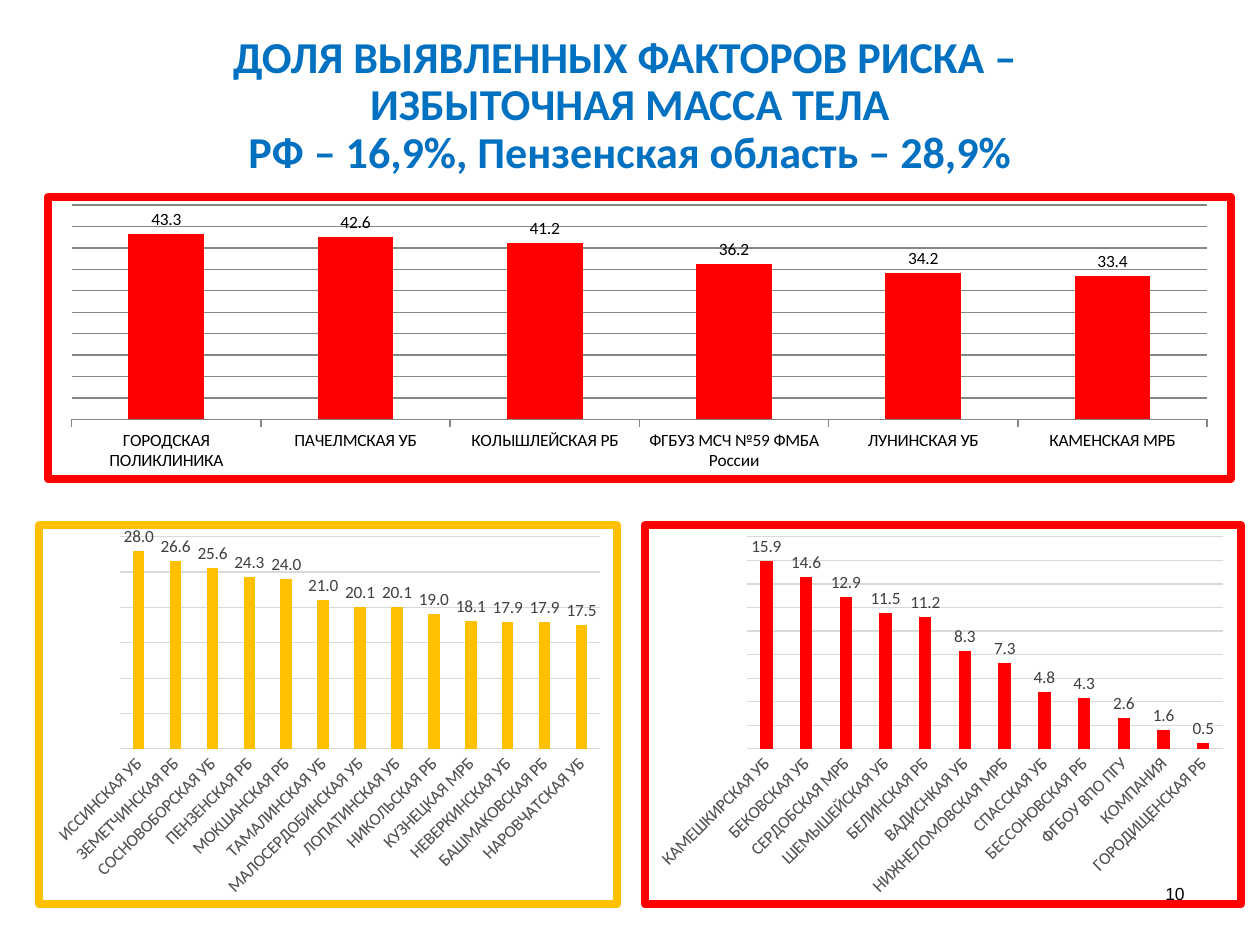
"""Build the slide on overweight as a risk factor, with one wide and two small bar charts."""
from dataclasses import dataclass

from lxml.etree import SubElement as Sub
from pptx import Presentation
from pptx.chart.data import CategoryChartData as Data
from pptx.dml.color import RGBColor as Rgb
from pptx.enum.chart import XL_CHART_TYPE as Kind, XL_LABEL_POSITION as Spot, XL_TICK_MARK as Tick
from pptx.enum.text import MSO_ANCHOR as Anchor, MSO_AUTO_SIZE as Fit, PP_ALIGN as Align
from pptx.oxml import parse_xml
from pptx.oxml.ns import nsdecls, qn
from pptx.util import Pt


@dataclass(frozen=True)
class Theme:
    """Hold the colours, fonts and sizes of the slide."""
    blue: str = "0070C0"
    red: str = "FF0000"
    gold: str = "FFC000"
    black: str = "000000"
    dark: str = "404040"
    mid: str = "595959"
    pale: str = "D9D9D9"
    rule: str = "868686"
    font: str = "Calibri"
    plain: str = "Arial"
    head: float = 25.2
    small: float = 10
    hair: float = 0.75
    frame: float = 4.5


T = Theme()
TITLE = ["ДОЛЯ ВЫЯВЛЕННЫХ ФАКТОРОВ РИСКА – ", "ИЗБЫТОЧНАЯ МАССА ТЕЛА",
         "РФ – 16,9%, Пензенская область – 28,9%"]
PAGE = "10"
MIDDLE = [("ИССИНСКАЯ УБ", 28), ("ЗЕМЕТЧИНСКАЯ РБ", 26.6), ("СОСНОВОБОРСКАЯ УБ", 25.6),
          ("ПЕНЗЕНСКАЯ РБ", 24.3), ("МОКШАНСКАЯ РБ", 24), ("ТАМАЛИНСКАЯ УБ", 21),
          ("МАЛОСЕРДОБИНСКАЯ УБ", 20.1), ("ЛОПАТИНСКАЯ УБ", 20.1), ("НИКОЛЬСКАЯ РБ", 19),
          ("КУЗНЕЦКАЯ МРБ", 18.1), ("НЕВЕРКИНСКАЯ УБ", 17.9), ("БАШМАКОВСКАЯ РБ", 17.9),
          ("НАРОВЧАТСКАЯ УБ", 17.5)]
HIGH = [("ГОРОДСКАЯ ПОЛИКЛИНИКА", 43.3), ("ПАЧЕЛМСКАЯ УБ", 42.6), ("КОЛЫШЛЕЙСКАЯ РБ", 41.2),
        ("ФГБУЗ МСЧ №59 ФМБА России", 36.2), ("ЛУНИНСКАЯ УБ", 34.2), ("КАМЕНСКАЯ МРБ", 33.4)]
LOW = [("КАМЕШКИРСКАЯ УБ", 15.9), ("БЕКОВСКАЯ УБ", 14.6), ("СЕРДОБСКАЯ МРБ", 12.9),
       ("ШЕМЫШЕЙСКАЯ УБ", 11.5), ("БЕЛИНСКАЯ РБ", 11.2), ("ВАДИСНКАЯ УБ", 8.3),
       ("НИЖНЕЛОМОВСКАЯ МРБ", 7.3), ("СПАССКАЯ УБ", 4.8), ("БЕССОНОВСКАЯ РБ", 4.3),
       ("ФГБОУ ВПО ПГУ", 2.6), ("КОМПАНИЯ", 1.6), ("ГОРОДИЩЕНСКАЯ РБ", 0.5)]

WIDE = dict(gap=150, lap=0, text=T.black, tick=T.black, grid=T.rule, mark=Tick.OUTSIDE, turn=0)
SLIM = dict(gap=219, lap=-27, text=T.dark, tick=T.mid, grid=T.pale, mark=Tick.NONE, turn=-45)
CHARTS = [
    dict(rows=MIDDLE, box=(20.2, 298, 334.8, 221), hue=T.gold, top=30, step=5,
         plot=(0.14, 0.03, 0.83, 0.56), look=SLIM),
    dict(rows=HIGH, box=(25.2, 110.2, 680.4, 165.6), hue=T.red, top=50, step=5,
         plot=(0.02, 0.03, 0.96, 0.76), look=WIDE),
    dict(rows=LOW, box=(366.5, 298, 344.9, 221), hue=T.red, top=18, step=2,
         plot=(0.17, 0.03, 0.8, 0.56), look=SLIM),
]


def style(font, size, hue, name=T.font, bold=False):
    font.size, font.name, font.bold = Pt(size), name, bold
    font.color.rgb = Rgb.from_string(hue)


def stroke(line, hue):
    line.color.rgb = Rgb.from_string(hue)
    line.width = Pt(T.hair)


def place(shape, *box):
    shape.left, shape.top, shape.width, shape.height = map(Pt, box)


def add_frame(chart, hue):
    chart._chartSpace.chart.addnext(parse_xml(
        f'<c:spPr {nsdecls("c", "a")}><a:noFill/><a:ln w="{Pt(T.frame)}"><a:solidFill>'
        f'<a:srgbClr val="{hue}"/></a:solidFill><a:round/></a:ln></c:spPr>'))


def set_plot(chart, plot):
    area = chart._chartSpace.chart.plotArea
    for old in area.findall(qn("c:layout")):
        area.remove(old)
    lay = parse_xml(f'<c:layout {nsdecls("c")}><c:manualLayout/></c:layout>')
    keys = ("layoutTarget", "xMode", "yMode", "x", "y", "w", "h")
    for key, val in zip(keys, ("inner", "edge", "edge", *plot)):
        Sub(lay[0], qn(f"c:{key}")).set("val", str(val))
    area.insert(0, lay)


def add_bars(slide, rows, box, hue, top, step, plot, look):
    data = Data(number_format="0.0")
    data.categories = [name for name, _ in rows]
    data.add_series("Series 1", [val for _, val in rows])
    chart = slide.shapes.add_chart(Kind.COLUMN_CLUSTERED, *map(Pt, box), data).chart
    chart.has_legend = chart.has_title = False
    style(chart.font, T.small, T.black)
    add_frame(chart, hue)
    set_plot(chart, plot)

    bars = chart.plots[0]
    bars.gap_width, bars.overlap, bars.vary_by_categories = look["gap"], look["lap"], False
    fill = bars.series[0].format.fill
    fill.solid()
    fill.fore_color.rgb = Rgb.from_string(hue)
    bars.has_data_labels = True
    tags = bars.data_labels
    tags.show_value, tags.position = True, Spot.OUTSIDE_END
    tags.number_format, tags.number_format_is_linked = "0.0", False
    style(tags.font, T.small, look["text"])

    cat, val = chart.category_axis, chart.value_axis
    cat.major_tick_mark = look["mark"]
    stroke(cat.format.line, look["grid"])
    style(cat.tick_labels.font, T.small, look["tick"])
    cat._element.txPr.bodyPr.set("rot", str(look["turn"] * 60000))
    val.minimum_scale, val.maximum_scale, val.major_unit = 0, top, step
    val.has_major_gridlines = True
    stroke(val.major_gridlines.format.line, look["grid"])
    val.visible = False


def add_title(slide):
    title = slide.shapes.title
    place(title, 36, 21.6, 648, 78.5)
    frame = title.text_frame
    frame.auto_size, frame.vertical_anchor = Fit.NONE, Anchor.MIDDLE
    para = frame.paragraphs[0]
    para.alignment, para.line_spacing = Align.CENTER, 0.9
    for num, line in enumerate(TITLE):
        if num:
            para.add_line_break()
        run = para.add_run()
        run.text = line
        style(run.font, T.head, T.blue, bold=True)


def add_page(slide):
    frame = slide.shapes.add_textbox(*map(Pt, (516, 491.8, 168, 37.4))).text_frame
    frame.word_wrap, frame.vertical_anchor = True, Anchor.MIDDLE
    para = frame.paragraphs[0]
    para.alignment = Align.RIGHT
    run = para.add_run()
    run.text = PAGE
    style(run.font, T.small, T.black, T.plain)


def main():
    deck = Presentation()
    deck.slide_width, deck.slide_height = Pt(720), Pt(540)
    slide = deck.slides.add_slide(deck.slide_layouts[5])
    add_title(slide)
    add_page(slide)
    for item in CHARTS:
        add_bars(slide, **item)
    deck.save("out.pptx")


if __name__ == "__main__":
    main()
